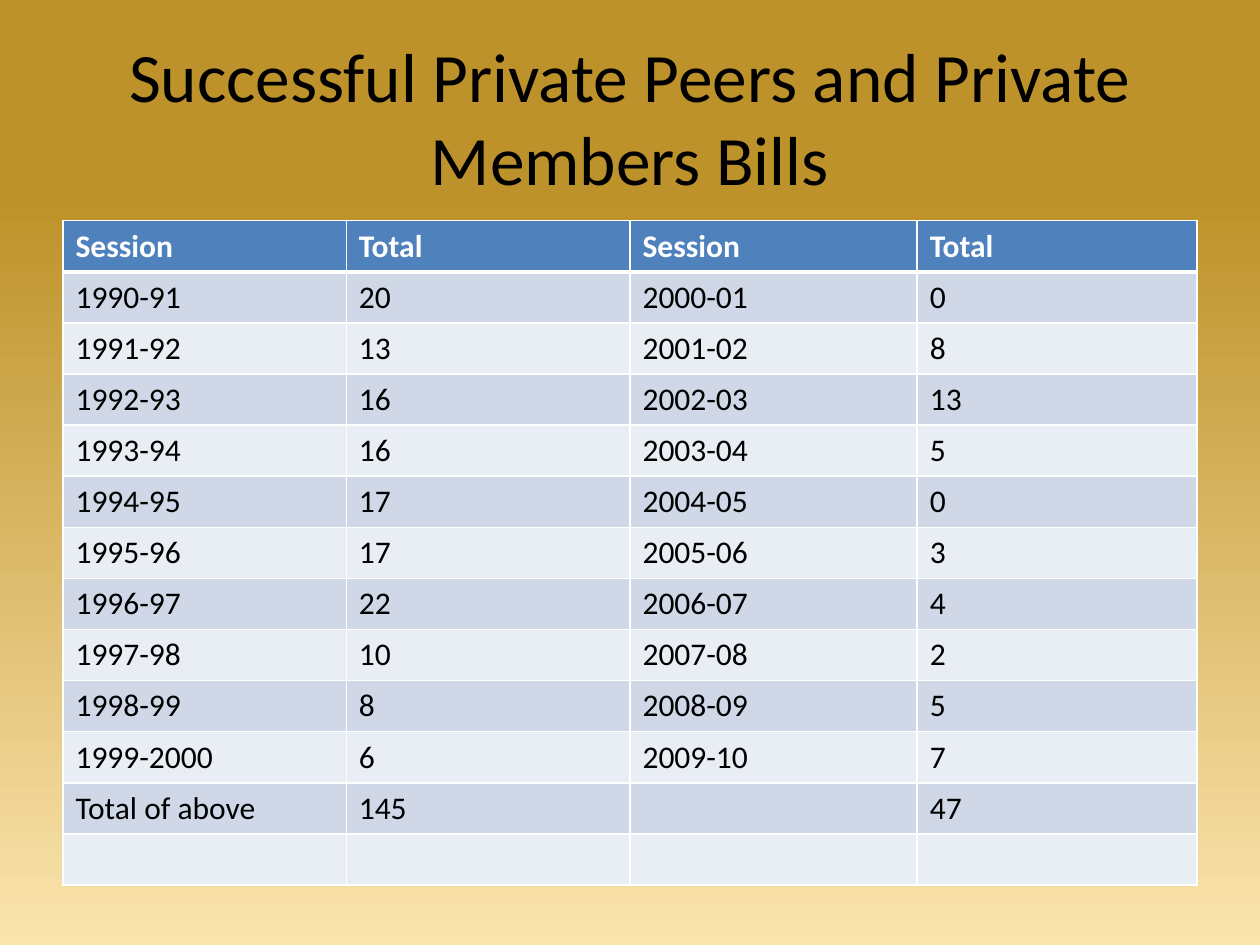
from dataclasses import dataclass

from lxml import etree
from pptx import Presentation
from pptx.dml.color import RGBColor
from pptx.enum.text import MSO_ANCHOR, PP_ALIGN
from pptx.oxml.ns import qn
from pptx.util import Cm, Pt

CENTER = PP_ALIGN.CENTER
LEFT = PP_ALIGN.LEFT
MIDDLE = MSO_ANCHOR.MIDDLE


@dataclass(frozen=True)
class Theme:
    font: str = "Calibri"
    title_size: float = 39.6
    table_size: float = 18
    text: str = "000000"
    header_text: str = "FFFFFF"
    header_fill: str = "4F81BD"
    bands: tuple[str, str] = ("D0D8E8", "E9EDF4")
    border: str = "FFFFFF"
    border_width: float = 1
    header_rule_width: float = 3
    background_top: str = "BD922A"
    background_bottom: str = "FBE4AE"


@dataclass(frozen=True)
class Row:
    first_session: str = ""
    first_total: str = ""
    second_session: str = ""
    second_total: str = ""

    def texts(self) -> tuple[str, str, str, str]:
        return (self.first_session, self.first_total,
                self.second_session, self.second_total)


THEME = Theme()
TITLE = "Successful Private Peers and Private\vMembers Bills"
COLUMN_WIDTHS = (5.71, 5.72, 5.79, 5.64)
ROW_HEIGHT = 1.03
ROWS = (
    Row("Session", "Total", "Session", "Total"),
    Row("1990-91", "20", "2000-01", "0"),
    Row("1991-92", "13", "2001-02", "8"),
    Row("1992-93", "16", "2002-03", "13"),
    Row("1993-94", "16", "2003-04", "5"),
    Row("1994-95", "17", "2004-05", "0"),
    Row("1995-96", "17", "2005-06", "3"),
    Row("1996-97", "22", "2006-07", "4"),
    Row("1997-98", "10", "2007-08", "2"),
    Row("1998-99", "8", "2008-09", "5"),
    Row("1999-2000", "6", "2009-10", "7"),
    Row("Total of above", "145", "", "47"),
    Row(),
)


def write_text(text_frame, text: str, *, size: float, color: str,
               bold: bool = False, align=LEFT) -> None:
    paragraph = text_frame.paragraphs[0]
    paragraph.text = text
    paragraph.alignment = align
    for run in paragraph.runs:
        run.font.name = THEME.font
        run.font.size = Pt(size)
        run.font.bold = bold
        run.font.color.rgb = RGBColor.from_string(color)


def set_borders(cell, *, top: float, bottom: float) -> None:
    """Draw the four cell edges; top and bottom are widths in points."""
    properties = cell._tc.get_or_add_tcPr()
    side = THEME.border_width
    for tag, width in (("lnL", side), ("lnR", side), ("lnT", top), ("lnB", bottom)):
        line = etree.SubElement(properties, qn(f"a:{tag}"), w=str(Pt(width)))
        fill = etree.SubElement(line, qn("a:solidFill"))
        etree.SubElement(fill, qn("a:srgbClr"), val=THEME.border)


def paint_background(slide) -> None:
    fill = slide.background.fill
    fill.gradient()
    fill.gradient_angle = 270
    stops = ((0.21, THEME.background_top), (1, THEME.background_bottom))
    for stop, (position, color) in zip(fill.gradient_stops, stops):
        stop.position = position
        stop.color.rgb = RGBColor.from_string(color)


def add_title(slide) -> None:
    shape = slide.shapes.add_textbox(Cm(1.27), Cm(0.76), Cm(22.86), Cm(3.18))
    shape.text_frame.word_wrap = True
    shape.text_frame.vertical_anchor = MIDDLE
    write_text(shape.text_frame, TITLE, size=THEME.title_size,
               color=THEME.text, align=CENTER)


def add_bills_table(slide) -> None:
    table = slide.shapes.add_table(
        len(ROWS), len(COLUMN_WIDTHS), Cm(1.27), Cm(4.45),
        Cm(sum(COLUMN_WIDTHS)), Cm(ROW_HEIGHT * len(ROWS))).table
    for column, width in zip(table.columns, COLUMN_WIDTHS):
        column.width = Cm(width)
    for index, row in enumerate(ROWS):
        table.rows[index].height = Cm(ROW_HEIGHT)
        is_header = index == 0
        fill = THEME.header_fill if is_header else THEME.bands[(index - 1) % 2]
        top = THEME.header_rule_width if index == 1 else THEME.border_width
        bottom = THEME.header_rule_width if is_header else THEME.border_width
        for cell, text in zip(table.rows[index].cells, row.texts()):
            set_borders(cell, top=top, bottom=bottom)
            cell.fill.solid()
            cell.fill.fore_color.rgb = RGBColor.from_string(fill)
            write_text(cell.text_frame, text, size=THEME.table_size, bold=is_header,
                       color=THEME.header_text if is_header else THEME.text)


def main() -> None:
    presentation = Presentation()
    presentation.slide_width = Cm(25.4)
    presentation.slide_height = Cm(19.05)
    slide = presentation.slides.add_slide(presentation.slide_layouts[6])
    paint_background(slide)
    add_title(slide)
    add_bills_table(slide)
    presentation.save("out.pptx")


if __name__ == "__main__":
    main()
